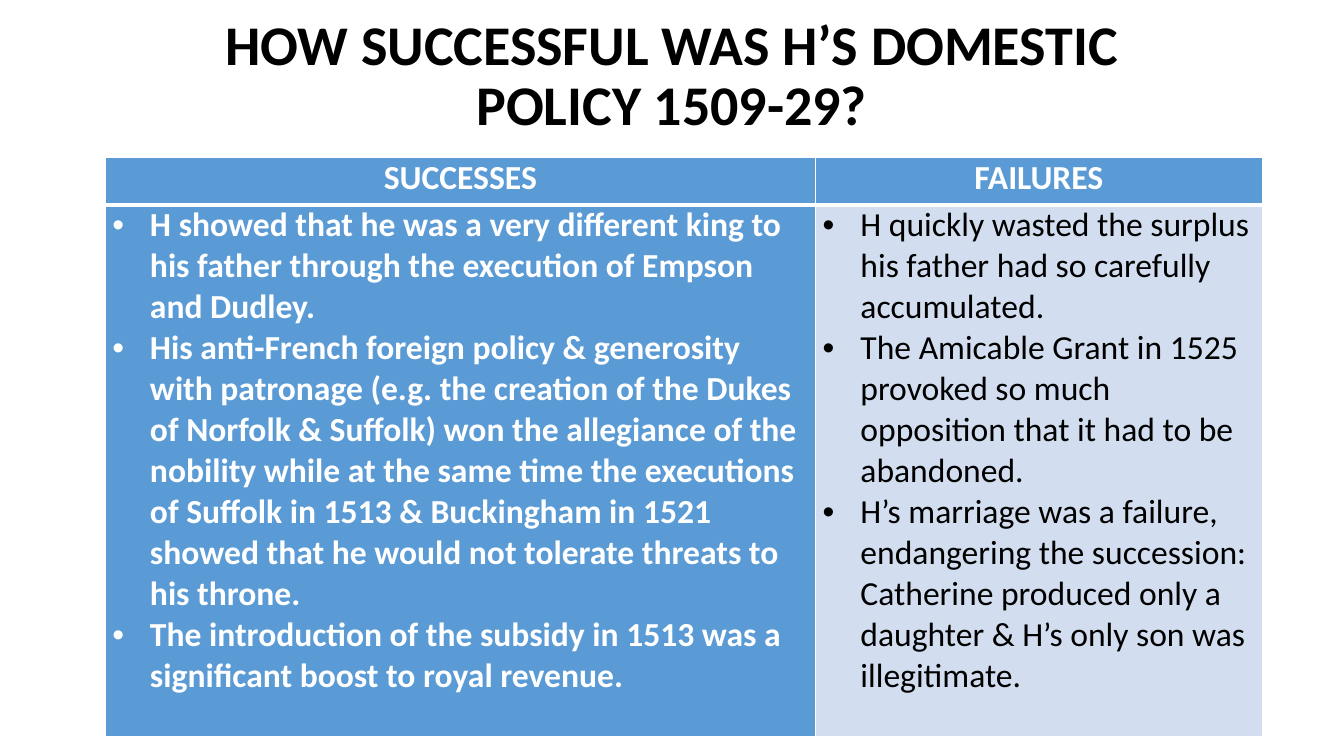
from lxml import etree
from pptx import Presentation
from pptx import util as u
from pptx.dml.color import RGBColor
from pptx.enum import text
from pptx.oxml import ns

BLACK = RGBColor(0, 0, 0)
WHITE = RGBColor(0xFF, 0xFF, 0xFF)
BLUE = RGBColor(0x5B, 0x9B, 0xD5)
PALE_BLUE = RGBColor(0xD2, 0xDE, 0xEF)
FONT = "Calibri"
HEADER_HEIGHT = u.Cm(1.19)
SUCCESSES_SHARE = 0.614

QUESTION = "HOW SUCCESSFUL WAS H’S DOMESTIC POLICY 1509-29?"
SUCCESSES = [
    "H showed that he was a very different king to his father through the "
    "execution of Empson and Dudley.",
    "His anti-French foreign policy & generosity with patronage (e.g. the "
    "creation of the Dukes of Norfolk & Suffolk) won the allegiance of the "
    "nobility while at the same time the executions of Suffolk in 1513 & "
    "Buckingham in 1521 showed that he would not tolerate threats to his throne.",
    "The introduction of the subsidy in 1513 was a significant boost to royal revenue.",
]
FAILURES = [
    "H quickly wasted the surplus his father had so carefully accumulated.",
    "The Amicable Grant in 1525 provoked so much opposition that it had to be abandoned.",
    "H’s marriage was a failure, endangering the succession: Catherine produced "
    "only a daughter & H’s only son was illegitimate.",
]


def set_font(paragraph, size, color, bold):
    """Apply the slide's typeface to a paragraph."""
    font = paragraph.font
    font.name, font.size, font.bold = FONT, u.Pt(size), bold
    font.color.rgb = color


def add_bullet(paragraph):
    """Give a paragraph a hanging round bullet."""
    properties = paragraph._p.get_or_add_pPr()
    properties.set("marL", str(u.Cm(0.95)))
    properties.set("indent", str(-u.Cm(0.95)))
    etree.SubElement(properties, ns.qn("a:buFont"), typeface="Arial")
    etree.SubElement(properties, ns.qn("a:buChar"), char="•")


def add_borders(cell, top, bottom):
    """Draw white borders, 1 pt at the sides and as given above and below."""
    properties = cell._tc.get_or_add_tcPr()
    for side, width in (("L", 1), ("R", 1), ("T", top), ("B", bottom)):
        line = etree.SubElement(properties, ns.qn(f"a:ln{side}"), w=str(u.Pt(width)))
        fill = etree.SubElement(line, ns.qn("a:solidFill"))
        etree.SubElement(fill, ns.qn("a:srgbClr"), val=str(WHITE))


def fill_cell(cell, lines, fill, color, bold, is_header):
    """Write a header or a bulleted list into a table cell."""
    cell.margin_left = cell.margin_right = u.Cm(0.18)
    cell.margin_top = cell.margin_bottom = 0
    add_borders(cell, 1 if is_header else 3, 3 if is_header else 1)
    cell.fill.solid()
    cell.fill.fore_color.rgb = fill
    cell.text_frame.text = "\n".join(lines)
    for paragraph in cell.text_frame.paragraphs:
        if is_header:
            paragraph.alignment = text.PP_ALIGN.CENTER
        else:
            add_bullet(paragraph)
        set_font(paragraph, 24, color, bold)


def add_title(slide, left, top, width, height):
    """Place the question at the bottom of its box."""
    frame = slide.shapes.add_textbox(left, top, width, height).text_frame
    frame.word_wrap = True
    frame.vertical_anchor = text.MSO_ANCHOR.BOTTOM
    question = frame.paragraphs[0]
    question.text = QUESTION
    question.alignment = text.PP_ALIGN.CENTER
    question.line_spacing = 0.9
    set_font(question, 40, BLACK, True)


def add_verdict_table(slide, left, top, width, height):
    """Set successes beside failures in a two-column table."""
    verdicts = slide.shapes.add_table(2, 2, left, top, width, height).table
    verdicts.horz_banding = False
    verdicts.first_col = True
    verdicts.columns[0].width = u.Emu(int(width * SUCCESSES_SHARE))
    verdicts.columns[1].width = width - verdicts.columns[0].width
    verdicts.rows[0].height = HEADER_HEIGHT
    verdicts.rows[1].height = height - HEADER_HEIGHT
    columns = (
        ("SUCCESSES", SUCCESSES, BLUE, WHITE, True),
        ("FAILURES", FAILURES, PALE_BLUE, BLACK, False),
    )
    for index, (heading, points, fill, color, bold) in enumerate(columns):
        fill_cell(verdicts.cell(0, index), [heading], BLUE, WHITE, True, True)
        fill_cell(verdicts.cell(1, index), points, fill, color, bold, False)


def main():
    """Build the slide and save it."""
    deck = Presentation()
    deck.slide_width, deck.slide_height = u.Cm(33.87), u.Cm(19.05)
    slide = deck.slides.add_slide(deck.slide_layouts[6])
    add_title(slide, u.Cm(4.23), 0, u.Cm(25.4), u.Cm(3.6))
    add_verdict_table(slide, u.Cm(2.65), u.Cm(3.97), u.Cm(29.16), u.Cm(14.6))
    deck.save("out.pptx")


if __name__ == "__main__":
    main()
